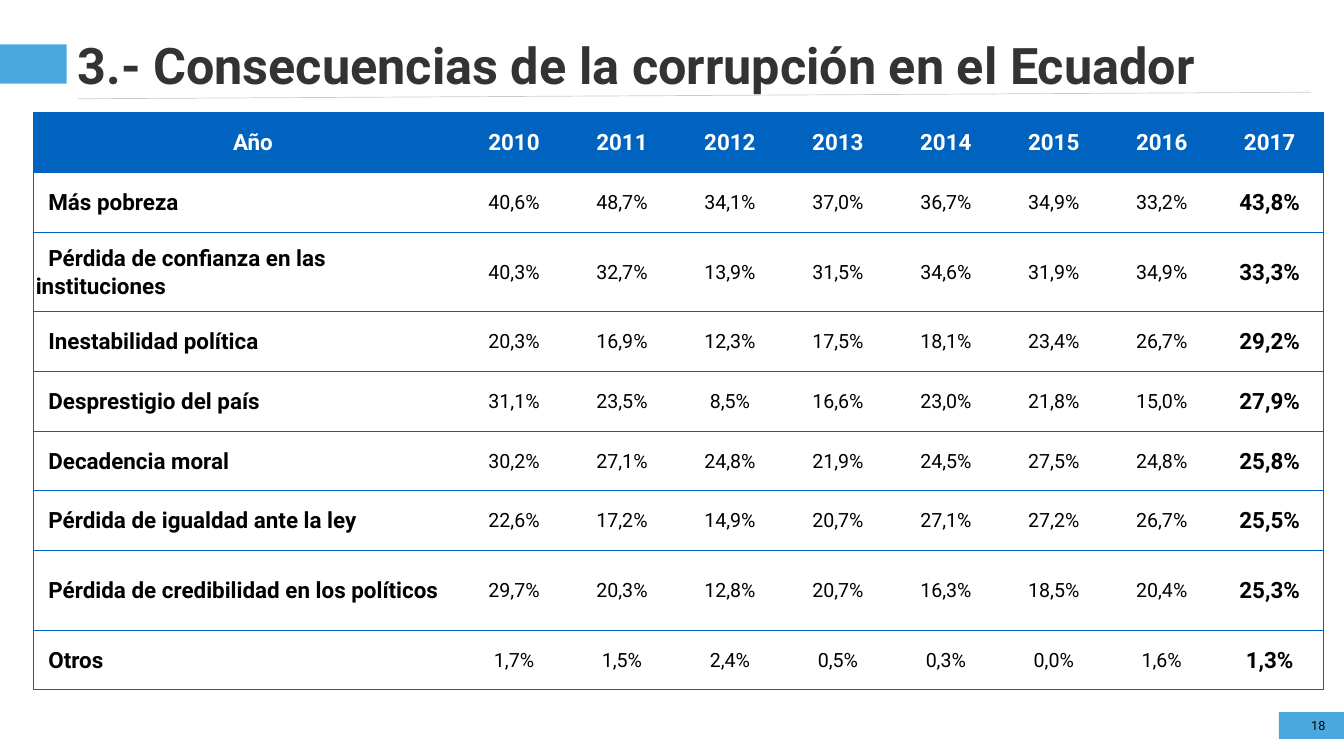
from lxml import etree
from pptx import Presentation
from pptx.dml.color import RGBColor
from pptx.enum.shapes import MSO_CONNECTOR, MSO_SHAPE
from pptx.enum.text import MSO_ANCHOR, PP_ALIGN
from pptx.oxml.ns import qn
from pptx.util import Inches, Pt

RECT, LINE = MSO_SHAPE.RECTANGLE, MSO_CONNECTOR.STRAIGHT
LEFT, CENTER, RIGHT = PP_ALIGN.LEFT, PP_ALIGN.CENTER, PP_ALIGN.RIGHT
MIDDLE = MSO_ANCHOR.MIDDLE

FONT = "Roboto"
BLUE = RGBColor(0x00, 0x63, 0xBF)
SKY = RGBColor(0x4B, 0xA8, 0xDF)
DARK = RGBColor(0x33, 0x33, 0x33)
GREY = RGBColor(0xCB, 0xCB, 0xCB)
BLACK = RGBColor(0x00, 0x00, 0x00)
WHITE = RGBColor(0xFF, 0xFF, 0xFF)

HEADS = ["Año"] + [str(year) for year in range(2010, 2018)]
ROWS = [
    ("Más pobreza", "40,6% 48,7% 34,1% 37,0% 36,7% 34,9% 33,2% 43,8%"),
    ("Pérdida de confianza en las instituciones", "40,3% 32,7% 13,9% 31,5% 34,6% 31,9% 34,9% 33,3%"),
    ("Inestabilidad política", "20,3% 16,9% 12,3% 17,5% 18,1% 23,4% 26,7% 29,2%"),
    ("Desprestigio del país", "31,1% 23,5% 8,5% 16,6% 23,0% 21,8% 15,0% 27,9%"),
    ("Decadencia moral", "30,2% 27,1% 24,8% 21,9% 24,5% 27,5% 24,8% 25,8%"),
    ("Pérdida de igualdad ante la ley", "22,6% 17,2% 14,9% 20,7% 27,1% 27,2% 26,7% 25,5%"),
    ("Pérdida de credibilidad en los políticos", "29,7% 20,3% 12,8% 20,7% 16,3% 18,5% 20,4% 25,3%"),
    ("Otros", "1,7% 1,5% 2,4% 0,5% 0,3% 0,0% 1,6% 1,3%"),
]
TALL = (2, 7)


def write(frame, text, size, color=BLACK, bold=False, align=LEFT, space=None, indent=0):
    """Put one formatted paragraph into a text frame."""
    para = frame.paragraphs[0]
    para.alignment = align
    if space:
        para.line_spacing = space
    if indent:
        para.level = 1
        props = para._p.get_or_add_pPr()
        props.set("marL", "0")
        props.set("indent", str(Inches(indent)))
    run = para.add_run()
    run.text = text
    font = run.font
    font.name, font.size, font.bold = FONT, Pt(size), bold
    font.color.rgb = color


def label(slide, text, left, top, width, height, **form):
    """Add a text box without margins."""
    box = slide.shapes.add_textbox(Inches(left), Inches(top), Inches(width), Inches(height))
    frame = box.text_frame
    frame.word_wrap = True
    frame.vertical_anchor = MIDDLE
    frame.margin_left = frame.margin_right = frame.margin_top = frame.margin_bottom = 0
    write(frame, text, **form)


def block(slide, left, top, width, height):
    """Add a plain sky-blue rectangle."""
    shape = slide.shapes.add_shape(RECT, Inches(left), Inches(top), Inches(width), Inches(height))
    shape.shadow.inherit = False
    shape.fill.solid()
    shape.fill.fore_color.rgb = SKY
    shape.line.fill.background()


def header(slide, left, top, width, height):
    """Draw the title with its side block and rule."""
    label(slide, "3.- Consecuencias de la corrupción en el Ecuador", left, top, width, height,
          size=72, color=DARK, bold=True)
    block(slide, 0, top + 0.21, 1.32, 0.78)
    rule = slide.shapes.add_connector(LINE, Inches(left), Inches(top + 1.29),
                                      Inches(left + 24.48), Inches(top + 1.16))
    rule.line.color.rgb = GREY
    rule.line.width = Pt(1)
    etree.SubElement(rule._element.spPr, qn("a:effectLst"))


def footer(slide, left, top, width, height):
    """Draw the page number on its block."""
    block(slide, left, top, width, height)
    label(slide, "18", left + 0.52, top + 0.11, 0.4, 0.3, size=18, align=RIGHT)


def border(cell, sides):
    """Draw the named sides of a cell and hide the others."""
    props = cell._tc.get_or_add_tcPr()
    for place, side in enumerate("LRTB"):
        line = etree.Element(qn("a:ln" + side), w=str(Pt(0.75)))
        if side in sides:
            fill = etree.SubElement(line, qn("a:solidFill"))
            etree.SubElement(fill, qn("a:srgbClr"), val=str(BLUE))
        else:
            etree.SubElement(line, qn("a:noFill"))
        props.insert(place, line)


def fill_cell(cell, text, row, col):
    """Write and style a table cell according to its place."""
    last = len(HEADS) - 1
    head, first = row == 0, col == 0
    strong = head or col in (0, last)
    cell.fill.solid()
    cell.fill.fore_color.rgb = BLUE if head else WHITE
    cell.vertical_anchor = MIDDLE
    cell.margin_left = cell.margin_right = Inches(0.05)
    cell.margin_top = cell.margin_bottom = 0
    write(cell.text_frame, text, size=32 if strong else 28, color=WHITE if head else BLACK,
          bold=strong, align=LEFT if first and not head else CENTER, space=1.07,
          indent=0.25 if first else 0)
    border(cell, "TB" + ("L" if first else "") + ("R" if col == last else ""))


def grid(slide, left, top, width, height):
    """Draw the table of consequences by year."""
    data = [HEADS] + [[name] + values.split() for name, values in ROWS]
    table = slide.shapes.add_table(len(data), len(HEADS), Inches(left), Inches(top),
                                   Inches(width), Inches(height)).table
    table.first_row = table.horz_banding = False
    wide, tall = 8.47, 1.58
    narrow = (width - wide) / (len(HEADS) - 1)
    short = (height - tall * len(TALL)) / (len(data) - len(TALL))
    for col, column in enumerate(table.columns):
        column.width = Inches(narrow if col else wide)
    for row, texts in enumerate(data):
        table.rows[row].height = Inches(tall if row in TALL else short)
        for col, text in enumerate(texts):
            fill_cell(table.cell(row, col), text, row, col)


def main():
    """Build the slide and save it."""
    deck = Presentation()
    deck.slide_width, deck.slide_height = Inches(26.67), Inches(15)
    slide = deck.slides.add_slide(deck.slide_layouts[6])
    header(slide, 1.54, 0.67, 24.84, 1.21)
    footer(slide, 25.38, 14.13, 1.32, 0.53)
    grid(slide, 0.66, 2.23, 25.61, 11.45)
    deck.save("out.pptx")


if __name__ == "__main__":
    main()
